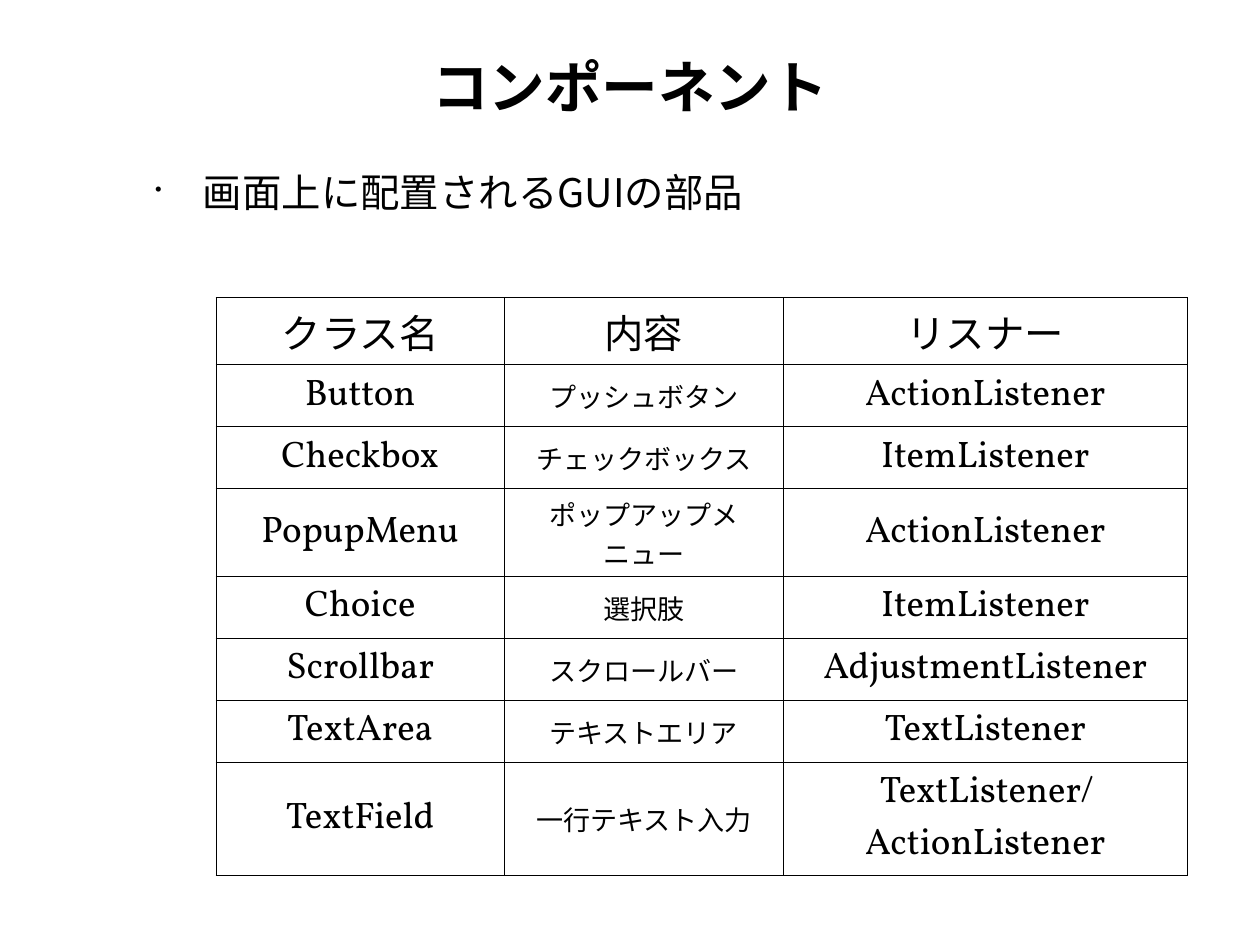
from lxml import etree
from pptx import Presentation
from pptx.dml.color import RGBColor
from pptx.enum.text import MSO_ANCHOR, PP_ALIGN
from pptx.oxml.ns import qn
from pptx.util import Inches, Pt

CENTER, JUSTIFY = PP_ALIGN.CENTER, PP_ALIGN.JUSTIFY
TOP, MIDDLE = MSO_ANCHOR.TOP, MSO_ANCHOR.MIDDLE

COLORS = {"text": "000000", "background": "FFFFFF", "border": "000000"}
JAPANESE, LATIN, CODE = "Noto Sans CJK JP", "Calibri", "Vollkorn"

HEADER = ("クラス名", "内容", "リスナー")
COMPONENTS = [
    ("Button", "プッシュボタン", "ActionListener"),
    ("Checkbox", "チェックボックス", "ItemListener"),
    ("PopupMenu", "ポップアップメニュー", "ActionListener"),
    ("Choice", "選択肢", "ItemListener"),
    ("Scrollbar", "スクロールバー", "AdjustmentListener"),
    ("TextArea", "テキストエリア", "TextListener"),
    ("TextField", "一行テキスト入力", "TextListener/ActionListener"),
]
COLUMN_WIDTHS = (3.25, 3.15, 4.56)
# The header and the rows with two lines of text are taller
ROW_HEIGHTS = (0.76, 0.7, 0.7, 0.99, 0.7, 0.7, 0.7, 1.28)
HEADER_STYLE = (LATIN, 32)
COLUMN_STYLES = ((CODE, 30), (LATIN, 22), (CODE, 30))


def style_paragraph(paragraph, font_name, size, alignment, bold=False):
    paragraph.alignment = alignment
    font = paragraph.font
    font.name, font.size, font.bold = font_name, Pt(size), bold
    font.color.rgb = RGBColor.from_string(COLORS["text"])
    # Japanese characters use their own typeface
    latin = paragraph._p.pPr.find(qn("a:defRPr")).find(qn("a:latin"))
    east_asian = etree.Element(qn("a:ea"), typeface=JAPANESE)
    latin.addnext(east_asian)


def add_text(slide, text, top, height, anchor):
    box = slide.shapes.add_textbox(Inches(1.39), Inches(top), Inches(11.44), Inches(height))
    frame = box.text_frame
    frame.word_wrap = True
    frame.vertical_anchor = anchor
    frame.margin_left = frame.margin_right = frame.margin_top = frame.margin_bottom = 0
    frame.text = text
    return frame.paragraphs[0]


def add_bullet(paragraph, left, hanging):
    properties = paragraph._p.get_or_add_pPr()
    properties.set("marL", str(Inches(left)))
    properties.set("indent", str(-Inches(hanging)))
    etree.SubElement(properties, qn("a:buSzPct"), val="50000")
    etree.SubElement(properties, qn("a:buChar"), char="•")


def add_borders(cell):
    properties = cell._tc.get_or_add_tcPr()
    for index, side in enumerate(("lnL", "lnR", "lnT", "lnB")):
        line = etree.Element(qn(f"a:{side}"), w=str(Pt(1)))
        fill = etree.SubElement(line, qn("a:solidFill"))
        etree.SubElement(fill, qn("a:srgbClr"), val=COLORS["border"])
        properties.insert(index, line)


def fill_cell(cell, text, font_name, size):
    cell.text = text
    cell.vertical_anchor = MIDDLE
    cell.margin_left = cell.margin_right = Inches(0.06)
    cell.margin_top = cell.margin_bottom = Inches(0.06)
    cell.fill.solid()
    cell.fill.fore_color.rgb = RGBColor.from_string(COLORS["background"])
    add_borders(cell)
    style_paragraph(cell.text_frame.paragraphs[0], font_name, size, CENTER)


def add_component_table(slide):
    rows = [HEADER, *COMPONENTS]
    table = slide.shapes.add_table(
        len(rows), len(HEADER), Inches(2.44), Inches(3.36),
        Inches(sum(COLUMN_WIDTHS)), Inches(sum(ROW_HEIGHTS)),
    ).table
    table.first_row = table.horz_banding = False
    for column, width in zip(table.columns, COLUMN_WIDTHS):
        column.width = Inches(width)
    for row, height in zip(table.rows, ROW_HEIGHTS):
        row.height = Inches(height)
    for row_index, texts in enumerate(rows):
        for column_index, text in enumerate(texts):
            style = COLUMN_STYLES[column_index] if row_index else HEADER_STYLE
            fill_cell(table.cell(row_index, column_index), text, *style)


def main():
    presentation = Presentation()
    presentation.slide_width = Inches(14.22)
    presentation.slide_height = Inches(10.67)
    slide = presentation.slides.add_slide(presentation.slide_layouts[6])

    # Title
    title = add_text(slide, "コンポーネント", 0.28, 1.38, MIDDLE)
    style_paragraph(title, JAPANESE, 46, CENTER, bold=True)

    # Description
    description = add_text(slide, "画面上に配置されるGUIの部品", 1.9, 7.38, TOP)
    add_bullet(description, 0.9, 0.54)
    style_paragraph(description, JAPANESE, 32, JUSTIFY)

    # Components and their listeners
    add_component_table(slide)

    presentation.save("out.pptx")


if __name__ == "__main__":
    main()
